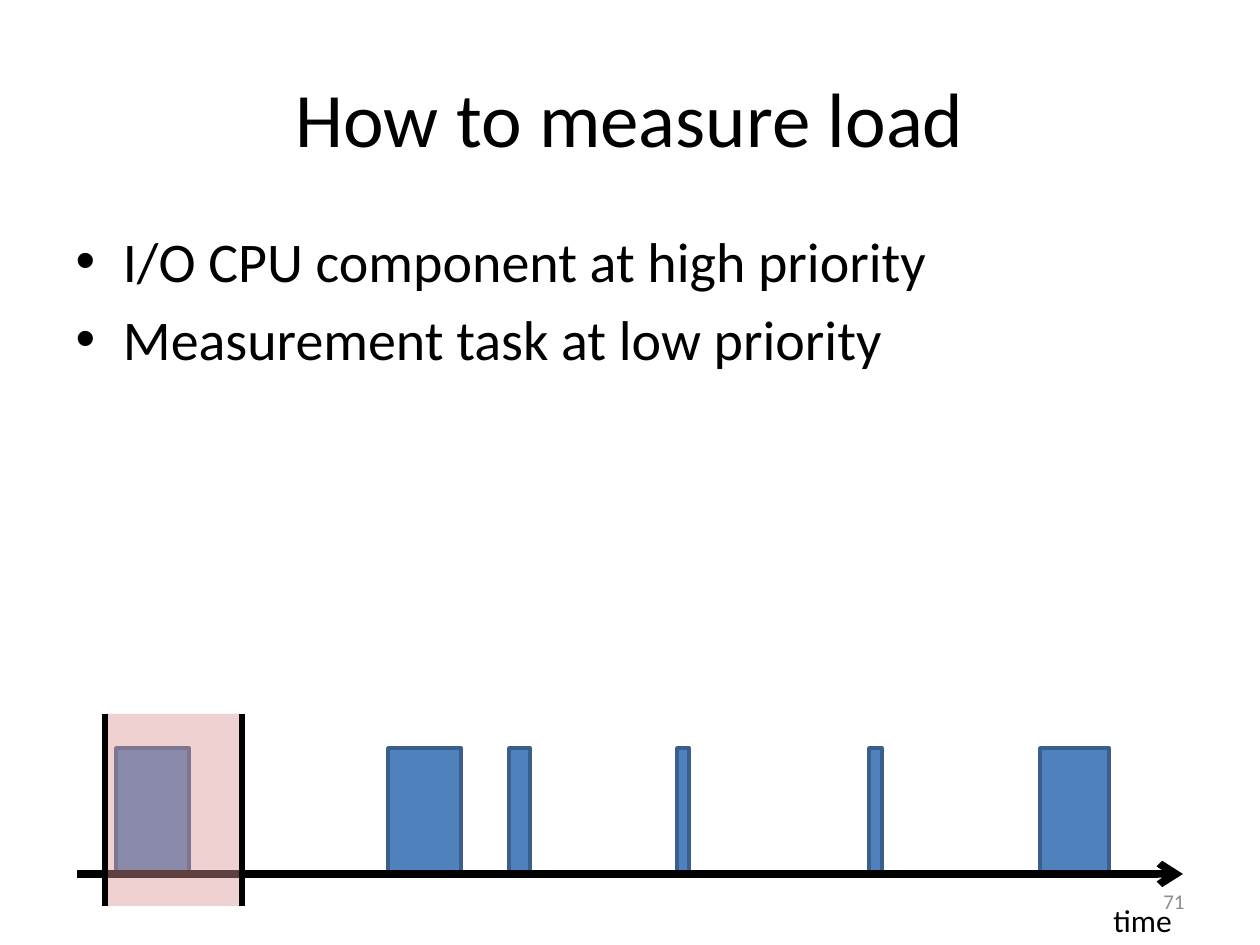
from lxml import etree
from pptx import Presentation
from pptx.dml.color import RGBColor
from pptx.enum.shapes import MSO_CONNECTOR, MSO_SHAPE
from pptx.enum.text import MSO_ANCHOR, MSO_AUTO_SIZE, PP_ALIGN
from pptx.oxml.ns import qn
from pptx.util import Emu, Pt

STRAIGHT = MSO_CONNECTOR.STRAIGHT
RECTANGLE = MSO_SHAPE.RECTANGLE
TOP, MIDDLE = MSO_ANCHOR.TOP, MSO_ANCHOR.MIDDLE
LEFT, CENTER, RIGHT = PP_ALIGN.LEFT, PP_ALIGN.CENTER, PP_ALIGN.RIGHT
NO_FIT, GROW = MSO_AUTO_SIZE.NONE, MSO_AUTO_SIZE.SHAPE_TO_FIT_TEXT

PX_PER_INCH = 126
BLACK, GRAY = "000000", "8C8C8C"
BAR_FILL, BAR_EDGE, WINDOW_FILL = "4F81BD", "3A5F8C", "D99694"


def px(length):
    return Emu(round(length * 914400 / PX_PER_INCH))


def color(code):
    return RGBColor.from_string(code)


class SlideBuilder:
    font_name = "Calibri"

    def __init__(self, slide):
        self.slide = slide

    def style(self, paragraph, size, code, align):
        paragraph.alignment = align
        paragraph.font.name = self.font_name
        paragraph.font.size = Pt(size)
        paragraph.font.color.rgb = color(code)

    def placeholder(self, index, box, lines, size, align, anchor, gap=0):
        holder = self.slide.placeholders[index]
        holder.left, holder.top, holder.width, holder.height = map(px, box)
        frame = holder.text_frame
        frame.text = "\n".join(lines)
        frame.vertical_anchor = anchor
        frame.auto_size = NO_FIT
        for position, paragraph in enumerate(frame.paragraphs):
            paragraph.space_before = Pt(gap if position else 0)
            self.style(paragraph, size, BLACK, align)

    def label(self, box, text, size, code, align, anchor=TOP, wrap=True):
        frame = self.slide.shapes.add_textbox(*map(px, box)).text_frame
        frame.word_wrap = wrap
        frame.auto_size = NO_FIT if wrap else GROW
        frame.vertical_anchor = anchor
        frame.text = text
        self.style(frame.paragraphs[0], size, code, align)

    def rectangle(self, box, fill, edge=None, alpha=None, parent=None):
        shapes = (parent or self.slide).shapes
        rect = shapes.add_shape(RECTANGLE, *map(px, box))
        rect.shadow.inherit = False
        rect.fill.solid()
        rect.fill.fore_color.rgb = color(fill)
        if alpha:
            fill_color = rect.fill._xPr.find(qn("a:solidFill"))[0]
            etree.SubElement(fill_color, qn("a:alpha"), val=str(alpha * 1000))
        if edge:
            rect.line.color.rgb = color(edge)
            rect.line.width = Pt(2)
        else:
            rect.line.fill.background()

    def line(self, ends, width, arrow=False, parent=None):
        shapes = (parent or self.slide).shapes
        connector = shapes.add_connector(STRAIGHT, *map(px, ends))
        connector.line.color.rgb = color(BLACK)
        connector.line.width = Pt(width)
        if arrow:
            etree.SubElement(connector.line._get_or_add_ln(), qn("a:tailEnd"), type="arrow")
        etree.SubElement(connector._element.spPr, qn("a:effectLst"))

    def group(self):
        return self.slide.shapes.add_group_shape()


def main():
    deck = Presentation()
    deck.slide_width, deck.slide_height = px(1260), px(945)
    builder = SlideBuilder(deck.slides.add_slide(deck.slide_layouts[1]))

    builder.placeholder(0, (63, 38, 1134, 158), ["How to measure load"], 44, CENTER, MIDDLE)
    priorities = ["I/O CPU component at high priority", "Measurement task at low priority"]
    builder.placeholder(1, (63, 220, 1134, 462), priorities, 32, LEFT, TOP, gap=6.4)

    axis_y, bar_height = 874, 126
    bursts = [(116, 73), (388, 73), (509, 21), (677, 12), (869, 13), (1040, 69)]
    for start, duration in bursts:
        bar = (start, axis_y - bar_height, duration, bar_height)
        builder.rectangle(bar, BAR_FILL, BAR_EDGE)
    builder.line((77, axis_y, 1183, axis_y), 4.31, arrow=True)
    builder.label((1101, 895, 84, 50), "time", 18, BLACK, LEFT, wrap=False)

    start, top, duration, height = window = (105, 714, 137, 192)
    measurement = builder.group()
    builder.rectangle(window, WINDOW_FILL, alpha=43, parent=measurement)
    for edge_x in (start, start + duration):
        builder.line((edge_x, top, edge_x, top + height), 3, parent=measurement)

    builder.label((903, 876, 294, 50), "71", 12, GRAY, RIGHT, MIDDLE)
    deck.save("out.pptx")


if __name__ == "__main__":
    main()
